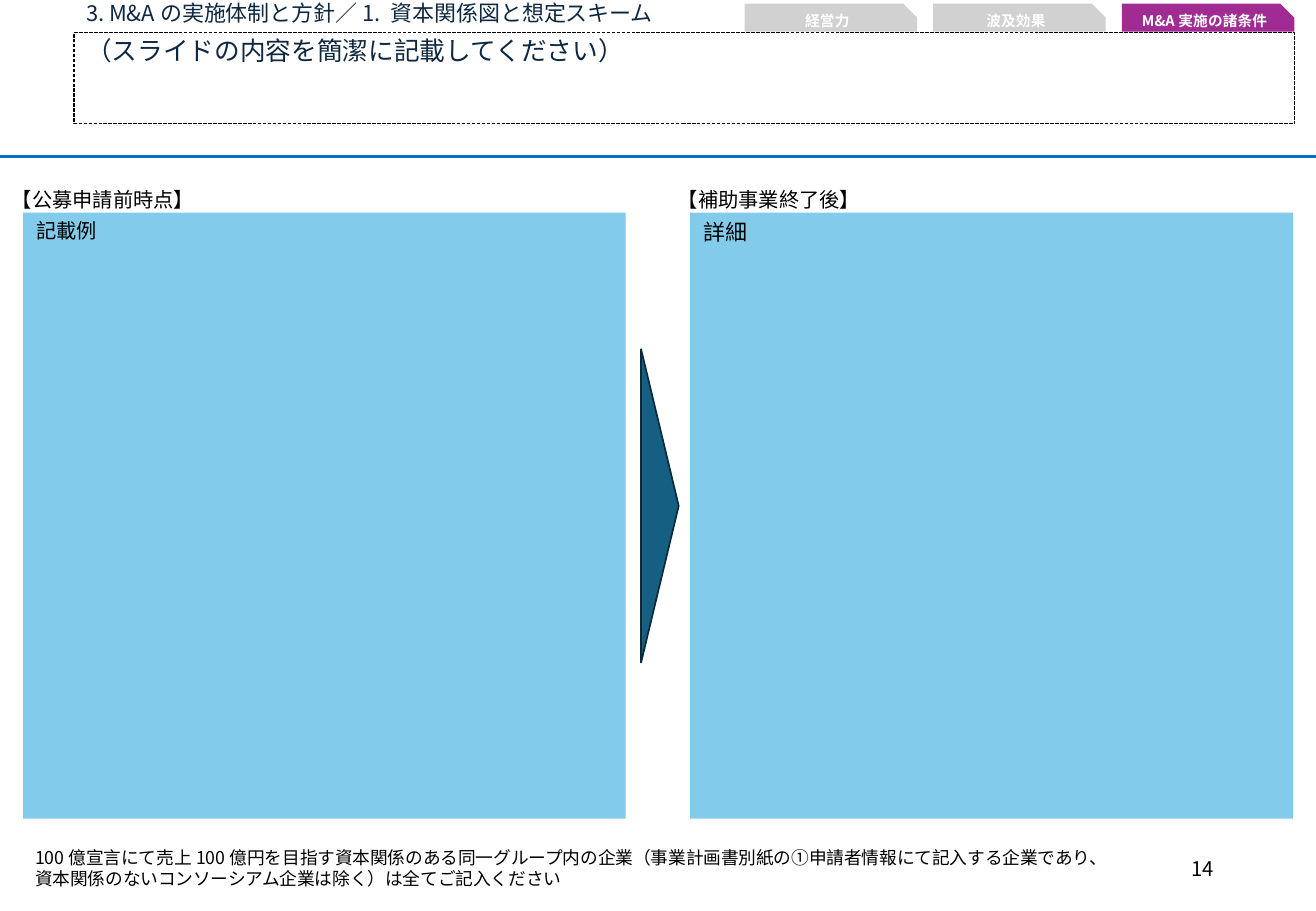
from lxml import etree
from pptx import Presentation
from pptx.dml.color import RGBColor
from pptx.enum import dml, shapes, text
from pptx.oxml import ns
from pptx.util import Pt

FONT = "Noto Sans CJK JP"
WIDTH, HEIGHT = 779.76, 540
BLACK, NAVY, WHITE = "000000", "0E2841", "FFFFFF"
GREY, PURPLE, SKY = "D1D1D1", "A02B93", "83CBEB"

TITLE = "3. M&Aの実施体制と方針／1. 資本関係図と想定スキーム"
SUMMARY = "（スライドの内容を簡潔に記載してください）"
TABS = [("経営力", GREY), ("波及効果", GREY), ("M&A実施の諸条件", PURPLE)]
# panel left, heading left, heading, body, body size
PANELS = [
    (13.7, 0, "【公募申請前時点】", "記載例", 12),
    (409, 394.6, "【補助事業終了後】", "詳細", 13),
]
FOOTNOTE = (
    "100億宣言にて売上100億円を目指す資本関係のある同一グループ内の企業"
    "（事業計画書別紙の①申請者情報にて記入する企業であり、\n"
    "資本関係のないコンソーシアム企業は除く）は全てご記入ください"
)
PAGE = "14"

TAB_LEFT, TAB_STEP = 441.2, 111.75

prs = Presentation()
prs.slide_width, prs.slide_height = Pt(WIDTH), Pt(HEIGHT)
s = prs.slides.add_slide(prs.slide_layouts[6])


def rgb(value):
    return RGBColor.from_string(value)


def write(sp, words, size, color=BLACK, align=text.PP_ALIGN.LEFT,
          anchor=text.MSO_ANCHOR.TOP, bold=False):
    """Fill the shape with one styled paragraph and return it."""
    tf = sp.text_frame
    tf.word_wrap = True
    tf.vertical_anchor = anchor
    p = tf.paragraphs[0]
    p.text = words
    p.alignment = align
    f = p.font
    f.name, f.size, f.bold = FONT, Pt(size), bold
    f.color.rgb = rgb(color)
    latin = f._element.find(ns.qn("a:latin"))
    east_asian = etree.Element(ns.qn("a:ea"), typeface=FONT)
    latin.addnext(east_asian)
    return p


def add_box(box, words, size, **style):
    return write(s.shapes.add_textbox(*map(Pt, box)), words, size, **style)


def add_shape(kind, box, fill=None, line=None, weight=1):
    sp = s.shapes.add_shape(kind, *map(Pt, box))
    sp.shadow.inherit = False
    if fill:
        sp.fill.solid()
        sp.fill.fore_color.rgb = rgb(fill)
    else:
        sp.fill.background()
    if line:
        sp.line.color.rgb = rgb(line)
        sp.line.width = Pt(weight)
    else:
        sp.line.fill.background()
    return sp


rule = s.shapes.add_connector(shapes.MSO_CONNECTOR.STRAIGHT,
                              Pt(0), Pt(92.9), Pt(WIDTH), Pt(92.9))
rule.line.color.rgb = rgb("0070C0")
rule.line.width = Pt(2)
etree.SubElement(rule._element.spPr, ns.qn("a:effectLst"))

for left, heading_left, heading, body, size in PANELS:
    panel = add_shape(shapes.MSO_SHAPE.RECTANGLE, (left, 126, 357.1, 359.3), SKY)
    panel.text_frame.margin_left = panel.text_frame.margin_right = Pt(7.9)
    write(panel, body, size).space_after = Pt(6.5)
    add_box((heading_left, 107.3, 172, 21.8), heading, 12)

add_box((43.9, -2.2, 403.9, 21.6), TITLE, 13, color=NAVY).line_spacing = 0.9

summary = add_shape(shapes.MSO_SHAPE.RECTANGLE, (43.9, 19.4, 723.2, 54),
                    line=BLACK, weight=0.75)
summary.line.dash_style = dml.MSO_LINE.SQUARE_DOT
write(summary, SUMMARY, 15.2, color=NAVY).line_spacing = 0.9

arrow = add_shape(shapes.MSO_SHAPE.ISOSCELES_TRIANGLE,
                  (298.1, 288.7, 185.8, 22.3), "156082", "092A39")
arrow.rotation = 90

for i, (label, fill) in enumerate(TABS):
    tab = add_shape(shapes.MSO_SHAPE.SNIP_1_RECTANGLE,
                    (TAB_LEFT + i * TAB_STEP, 2.2, 102.2, 16.5), fill)
    tab.adjustments[0] = 0.5
    write(tab, label, 8.7, color=WHITE, align=text.PP_ALIGN.CENTER,
          anchor=text.MSO_ANCHOR.MIDDLE, bold=True)

add_box((13.7, 498.2, 666, 32.4), FOOTNOTE, 10.5)
add_box((550.8, 500.4, 175.7, 28.8), PAGE, 12, align=text.PP_ALIGN.RIGHT,
        anchor=text.MSO_ANCHOR.MIDDLE)

prs.save("out.pptx")
